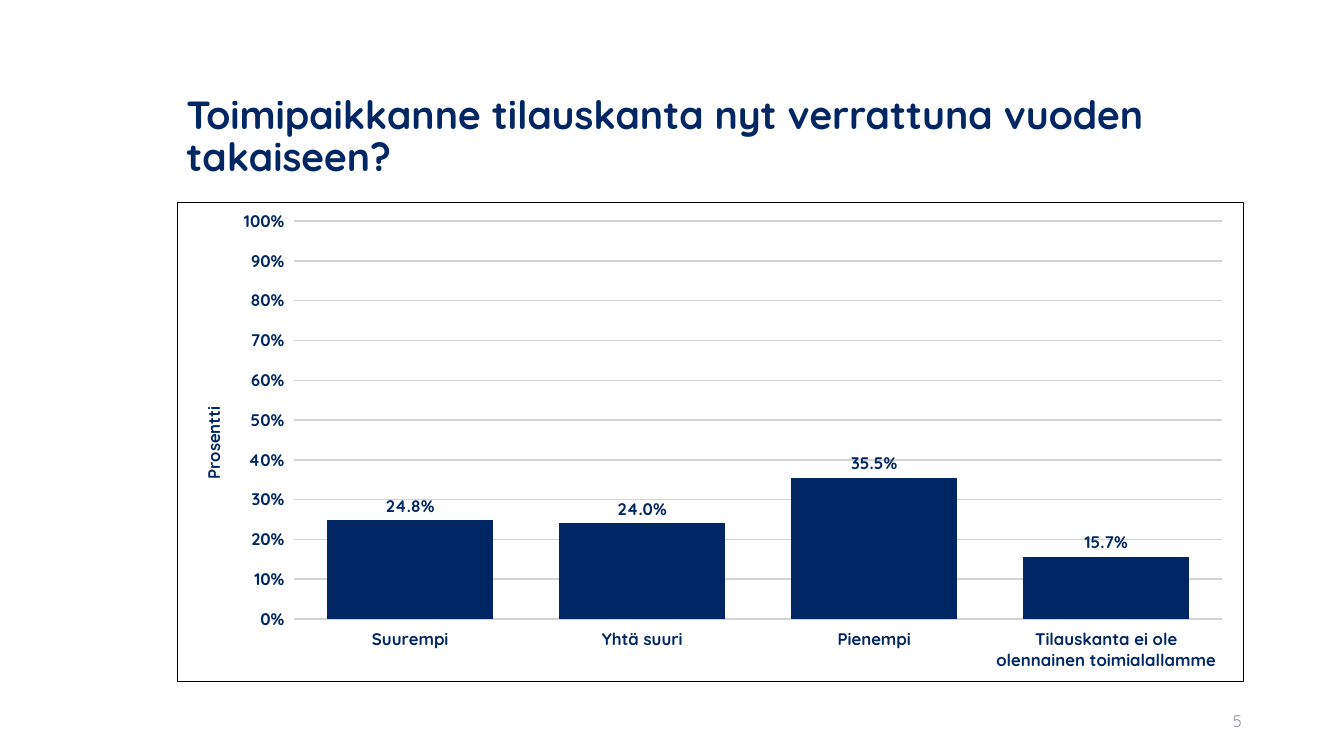
import pptx
import pptx.chart.data
import pptx.dml.color
import pptx.enum.chart
import pptx.enum.text
import pptx.oxml
import pptx.oxml.ns
import pptx.util
from pptx.util import Cm

NAVY = pptx.dml.color.RGBColor(0x00, 0x26, 0x63)
GREY = pptx.dml.color.RGBColor(0x8C, 0x8E, 0x9F)
GRID_GREY = pptx.dml.color.RGBColor(0xD3, 0xD3, 0xD3)
WHITE = pptx.dml.color.RGBColor(0xFF, 0xFF, 0xFF)
BLACK = pptx.dml.color.RGBColor(0x00, 0x00, 0x00)
FONT = "Quicksand"
LEFT, WIDTH = Cm(4.45), Cm(26.9)

ANSWERS = {
    "Suurempi": 0.248,
    "Yhtä suuri": 0.24,
    "Pienempi": 0.355,
    "Tilauskanta ei ole olennainen toimialallamme": 0.157,
}


def style_font(font, size, color, bold):
    font.name = FONT
    font.size = pptx.util.Pt(size)
    font.bold = bold
    font.color.rgb = color


def add_text(slide, text, left, top, width, height, size, color, bold=False,
             alignment=pptx.enum.text.PP_ALIGN.LEFT, line_spacing=1.0):
    frame = slide.shapes.add_textbox(left, top, width, height).text_frame
    frame.word_wrap = True
    frame.vertical_anchor = pptx.enum.text.MSO_ANCHOR.MIDDLE
    paragraph = frame.paragraphs[0]
    paragraph.text = text
    paragraph.alignment = alignment
    paragraph.line_spacing = line_spacing
    style_font(paragraph.font, size, color, bold)


def set_layout(element, index, target="", **fractions):
    """Place a chart part at fractions of the chart's width and height."""
    for layout in element.xpath("c:layout"):
        element.remove(layout)
    inner = f'<c:layoutTarget val="{target}"/>' if target else ""
    inner += '<c:xMode val="edge"/><c:yMode val="edge"/>'
    inner += "".join(f'<c:{name} val="{value}"/>' for name, value in fractions.items())
    element.insert(index, pptx.oxml.parse_xml(
        f'<c:layout {pptx.oxml.ns.nsdecls("c")}>'
        f"<c:manualLayout>{inner}</c:manualLayout></c:layout>"))


def add_chart_frame(chart):
    """Give the whole chart a white ground and a thin black border."""
    properties = pptx.oxml.parse_xml(
        f'<c:spPr {pptx.oxml.ns.nsdecls("c", "a")}>'
        f'<a:solidFill><a:srgbClr val="{WHITE}"/></a:solidFill>'
        f'<a:ln w="{pptx.util.Pt(0.5)}"><a:solidFill><a:srgbClr val="{BLACK}"/>'
        "</a:solidFill></a:ln></c:spPr>")
    chart._chartSpace.xpath("c:chart")[0].addnext(properties)


def style_axes(chart):
    for axis in (chart.category_axis, chart.value_axis):
        axis.format.line.fill.background()
        axis.major_tick_mark = pptx.enum.chart.XL_TICK_MARK.OUTSIDE
        axis.minor_tick_mark = pptx.enum.chart.XL_TICK_MARK.NONE
    axis = chart.value_axis
    axis.minimum_scale, axis.maximum_scale, axis.major_unit = 0, 1, 0.1
    axis.tick_labels.number_format = "0%"
    axis.tick_labels.number_format_is_linked = False
    axis.major_gridlines.format.line.color.rgb = GRID_GREY
    axis.major_gridlines.format.line.width = pptx.util.Pt(1)
    title = axis.axis_title
    title.text_frame.text = "Prosentti"
    style_font(title.text_frame.paragraphs[0].font, 12, NAVY, True)
    set_layout(title._element, 1, x=0.02, y=0.42)


def add_answer_chart(slide):
    data = pptx.chart.data.CategoryChartData(number_format="0.0%")
    data.categories = list(ANSWERS)
    data.add_series("Series 1", list(ANSWERS.values()))
    chart = slide.shapes.add_chart(
        pptx.enum.chart.XL_CHART_TYPE.COLUMN_CLUSTERED,
        LEFT, Cm(5.08), WIDTH, Cm(12.1), data).chart
    chart.has_legend = False
    chart.has_title = False
    style_font(chart.font, 12, NAVY, True)
    add_chart_frame(chart)
    style_axes(chart)
    set_layout(chart._chartSpace.xpath("c:chart/c:plotArea")[0], 0, "inner",
               x=0.11, y=0.04, w=0.87, h=0.83)

    plot = chart.plots[0]
    plot.gap_width = 40
    plot.overlap = -2
    plot.vary_by_categories = False
    fill = plot.series[0].format.fill
    fill.solid()
    fill.fore_color.rgb = NAVY
    plot.has_data_labels = True
    labels = plot.data_labels
    labels.show_value = True
    labels.number_format = "0.0%"
    labels.number_format_is_linked = False
    labels.position = pptx.enum.chart.XL_LABEL_POSITION.OUTSIDE_END
    style_font(labels.font, 12, NAVY, True)


def main():
    presentation = pptx.Presentation()
    presentation.slide_width = Cm(33.87)
    presentation.slide_height = Cm(19.05)
    slide = presentation.slides.add_slide(presentation.slide_layouts[6])
    add_text(slide, "Toimipaikkanne tilauskanta nyt verrattuna vuoden takaiseen?",
             LEFT, Cm(1.63), WIDTH, Cm(3.68), 28, NAVY, bold=True, line_spacing=0.9)
    add_text(slide, "5", Cm(23.93), Cm(17.65), Cm(7.62), Cm(1.02), 12, GREY,
             alignment=pptx.enum.text.PP_ALIGN.RIGHT)
    add_answer_chart(slide)
    presentation.save("out.pptx")


if __name__ == "__main__":
    main()
